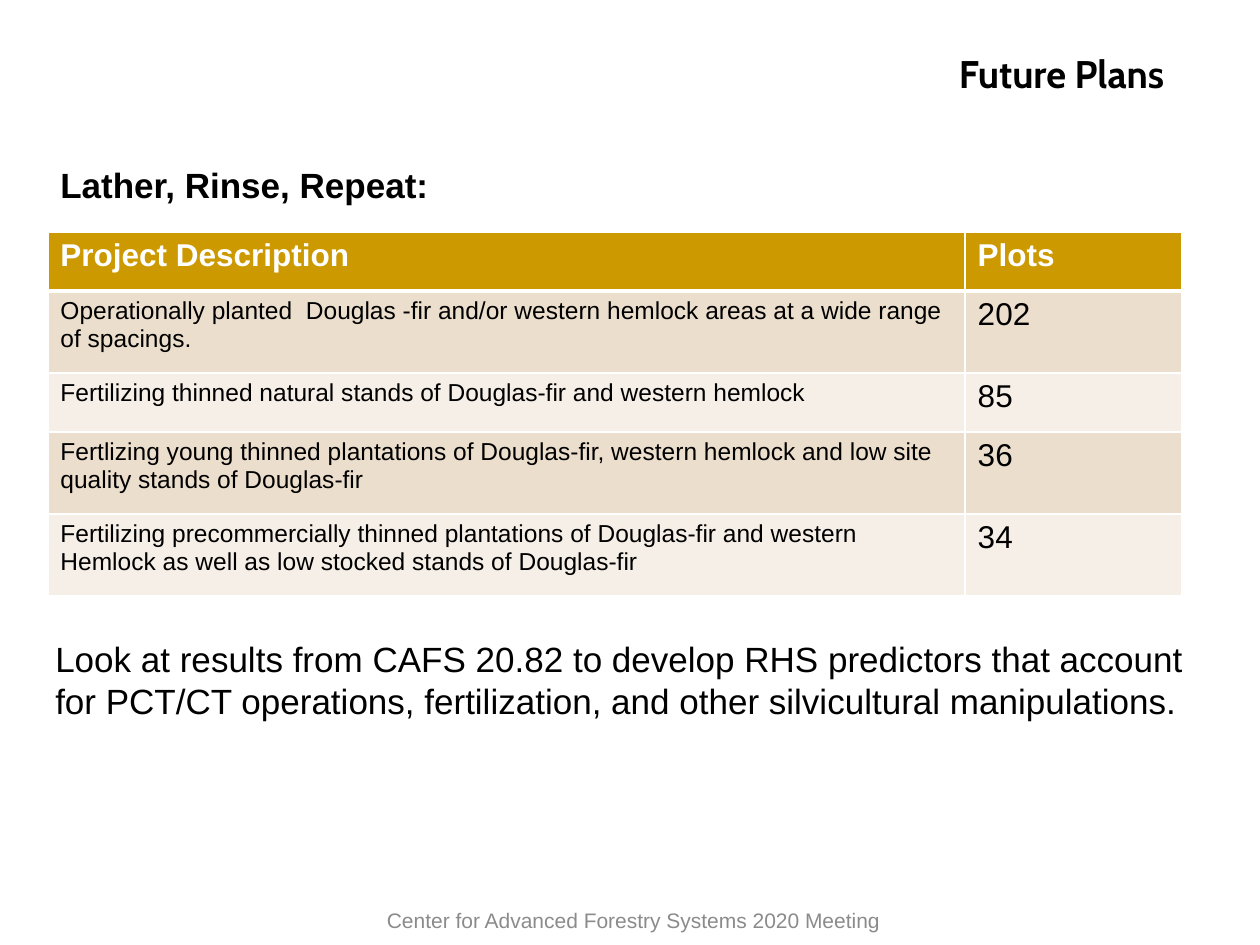
import pptx
import pptx.dml.color
import pptx.enum.text
import pptx.oxml
import pptx.oxml.ns
import pptx.util
from pptx.util import Inches

ALIGN = pptx.enum.text.PP_ALIGN
ANCHOR = pptx.enum.text.MSO_ANCHOR

BLACK, WHITE, GRAY = "000000", "FFFFFF", "8B8B8B"
HEADER_FILL = "CC9900"
BAND_FILLS = ("ECDECC", "F6EFE7")

HEADINGS = ("Project Description", "Plots")
PROJECTS = (
    ("Operationally planted  Douglas -fir and/or western hemlock areas "
     "at a wide range of spacings.", "202"),
    ("Fertilizing thinned natural stands of Douglas-fir and western hemlock", "85"),
    ("Fertlizing young thinned plantations of Douglas-fir, western hemlock "
     "and low site quality stands of Douglas-fir", "36"),
    ("Fertilizing precommercially thinned plantations of Douglas-fir and western "
     "Hemlock as well as low stocked stands of Douglas-fir", "34"),
)
COLUMN_WIDTHS = (7.28, 1.72)
ROW_HEIGHTS = (0.47, 0.65, 0.47, 0.65, 0.65)


def color(hex_string):
    return pptx.dml.color.RGBColor.from_string(hex_string)


def write(frame, text, size, hex_color=BLACK, bold=False, font="Arial", align=ALIGN.LEFT):
    frame.text = text
    para = frame.paragraphs[0]
    para.alignment = align
    for span in para.runs:
        span.font.name = font
        span.font.size = pptx.util.Pt(size)
        span.font.bold = bold
        span.font.color.rgb = color(hex_color)


def add_title(page, text):
    title = page.shapes.title
    title.left, title.top = Inches(7.13), Inches(0.35)
    title.width, title.height = Inches(2.21), Inches(0.4)
    frame = title.text_frame
    frame.word_wrap = False
    frame.auto_size = pptx.enum.text.MSO_AUTO_SIZE.NONE
    frame.vertical_anchor = ANCHOR.TOP
    write(frame, text, 22, bold=True, font="Cabin", align=ALIGN.RIGHT)


def add_text(page, text, left, top, width, height, size, anchor=ANCHOR.TOP, **style):
    box = page.shapes.add_textbox(Inches(left), Inches(top), Inches(width), Inches(height))
    frame = box.text_frame
    frame.word_wrap = True
    frame.vertical_anchor = anchor
    write(frame, text, size, **style)


def set_borders(cell, top, bottom):
    """Draw white borders, 1 pt at the sides and the given points above and below."""
    properties = cell._tc.get_or_add_tcPr()
    for side, points in (("L", 1), ("R", 1), ("T", top), ("B", bottom)):
        properties.append(pptx.oxml.parse_xml(
            f'<a:ln{side} {pptx.oxml.ns.nsdecls("a")} w="{pptx.util.Pt(points)}">'
            f'<a:solidFill><a:srgbClr val="{WHITE}"/></a:solidFill></a:ln{side}>'))


def fill_cell(cell, text, fill, borders, **style):
    set_borders(cell, *borders)
    cell.fill.solid()
    cell.fill.fore_color.rgb = color(fill)
    write(cell.text_frame, text, **style)


def add_project_table(page):
    table = page.shapes.add_table(
        len(ROW_HEIGHTS), len(COLUMN_WIDTHS), Inches(0.38), Inches(1.84),
        Inches(sum(COLUMN_WIDTHS)), Inches(sum(ROW_HEIGHTS))).table
    for column, width in zip(table.columns, COLUMN_WIDTHS):
        column.width = Inches(width)
    for row, height in zip(table.rows, ROW_HEIGHTS):
        row.height = Inches(height)

    for column, heading in enumerate(HEADINGS):
        fill_cell(table.cell(0, column), heading, HEADER_FILL, (1, 3),
                  size=18, hex_color=WHITE, bold=True)
    for row, project in enumerate(PROJECTS, start=1):
        fill = BAND_FILLS[(row - 1) % 2]
        borders = (3 if row == 1 else 1, 1)
        for column, (text, size) in enumerate(zip(project, (14, 18))):
            fill_cell(table.cell(row, column), text, fill, borders, size=size)


def main():
    deck = pptx.Presentation()
    deck.slide_width, deck.slide_height = Inches(10), Inches(7.5)
    page = deck.slides.add_slide(deck.slide_layouts.get_by_name("Title Only"))

    add_text(page, "Center for Advanced Forestry Systems 2020 Meeting",
             2.78, 7.1, 4.5, 0.4, 12, anchor=ANCHOR.MIDDLE,
             hex_color=GRAY, align=ALIGN.CENTER)
    add_title(page, "Future Plans")
    add_text(page, "Lather, Rinse, Repeat:", 0.38, 1.25, 9.25, 0.59, 20, bold=True)
    add_project_table(page)
    add_text(page, "Look at results from CAFS 20.82 to develop RHS predictors that "
             "account for PCT/CT operations, fertilization, and other silvicultural "
             "manipulations.", 0.34, 5.01, 9.25, 0.96, 20)

    deck.save("out.pptx")


if __name__ == "__main__":
    main()
